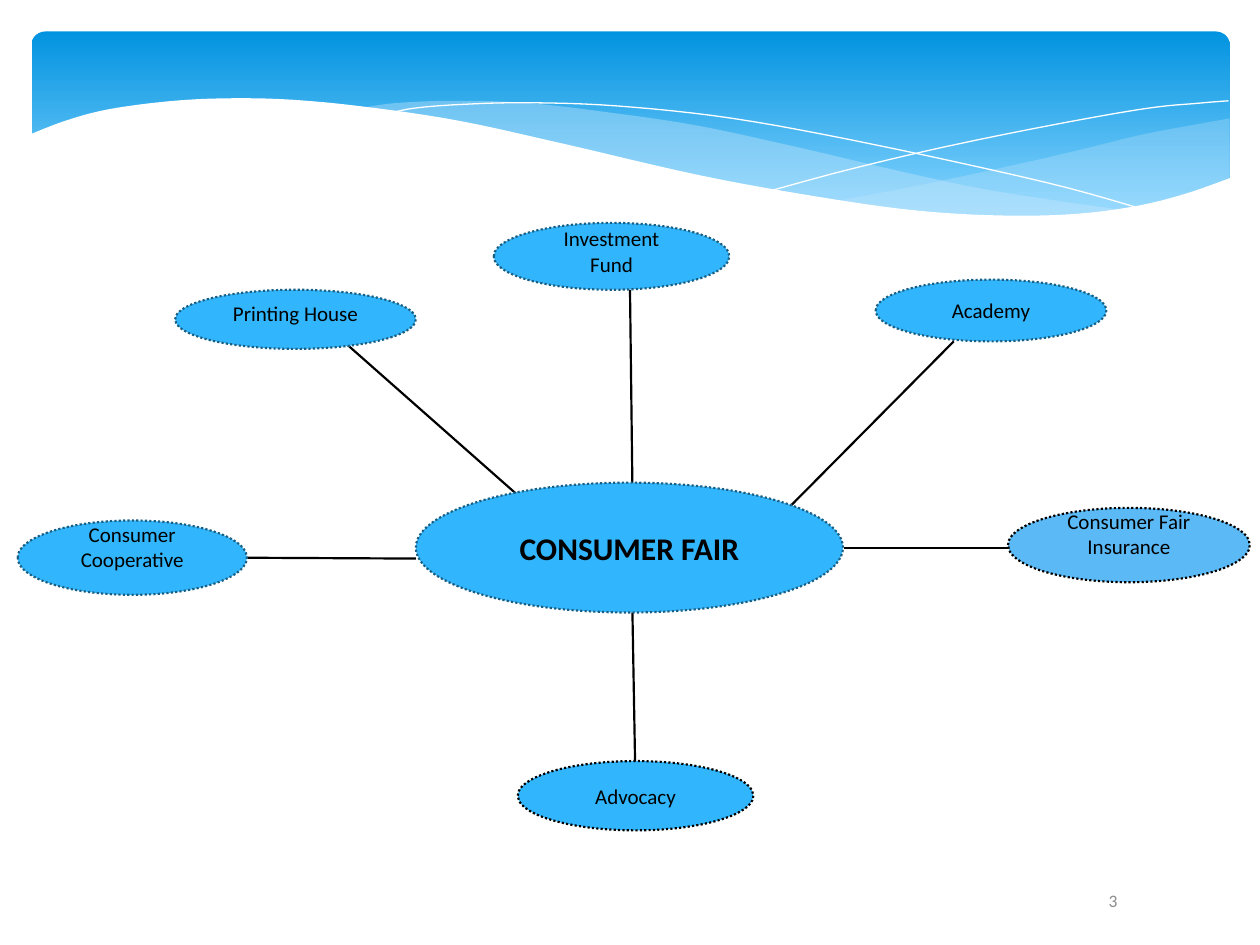
import dataclasses
import itertools
import typing

import lxml.etree
import pptx
import pptx.dml.color
import pptx.enum.dml
import pptx.enum.shapes
import pptx.enum.text
import pptx.oxml.ns
import pptx.util

Point = tuple[float, float]
FONT = "Calibri"
BLACK, WHITE, BLUE, DARK_BLUE = "000000", "FFFFFF", "31B6FD", "195F84"
VEIL = "C6E7FC"
STEPS_PER_KNOT = 6


@dataclasses.dataclass
class Bubble:
    text: str
    left: float
    top: float
    width: float
    height: float
    fill: str = BLUE
    outline: str = DARK_BLUE
    size: float = 12
    bold: bool = False
    text_raise: float = 0


@dataclasses.dataclass
class Wave:
    edges: list[list[Point]]
    fill: str | None = None
    opacity: int = 100


BUBBLES = [
    Bubble("Consumer Fair Insurance", 576, 290.2, 138.2, 42.5, "5BBAF6", BLACK, text_raise=6.3),
    Bubble("Consumer Cooperative", 10.1, 297.4, 131, 42.5, text_raise=6.3),
    Bubble("Printing House", 100.1, 165.6, 137.5, 33.8, text_raise=3.4),
    Bubble("Advocacy", 295.9, 434.9, 134.6, 39.6, outline=BLACK),
    Bubble("Investment Fund", 282.2, 127.4, 134.6, 38.2, text_raise=3),
    Bubble("Academy", 500.4, 159.8, 131.8, 35.3),
    Bubble("CONSUMER FAIR", 237.6, 275.8, 244.1, 74.2, size=18, bold=True),
]

SPOKES: list[tuple[Point, Point]] = [
    ((361.4, 349.9), (362.9, 434.9)),
    ((482.4, 313.2), (576, 313.2)),
    ((450.7, 290.2), (545, 195.1)),
    ((360, 165.6), (361.4, 279.4)),
    ((295.9, 283), (198, 196.6)),
    ((237.6, 319.2), (139.7, 318.7)),
]

WAVES = [
    Wave([
        [(702.7, 67.7), (682.6, 71.3), (652.3, 77), (619.9, 85), (579.6, 94.3),
         (524.9, 106), (475.9, 115.2)],
        [(475.9, 115.2), (517.7, 120.2), (553.7, 123.1), (593.3, 123.8), (634, 121.7),
         (668.2, 115.2), (702.7, 101.5)],
    ], VEIL, 29),
    Wave([
        [(643, 120.2), (602.6, 114.5), (558, 107.3), (508.3, 96.5), (452.9, 83.5),
         (399.6, 72), (352, 64.8), (302.4, 59), (259.9, 57.6), (225.4, 59), (205.9, 61.9)],
        [(205.9, 61.9), (246.2, 67.5), (290.9, 76.3), (353.5, 90.7), (420.5, 105.1),
         (478.8, 115.9), (530, 121.7), (573.1, 124.6), (610.6, 123.8), (643, 120.2)],
    ], VEIL, 40),
    Wave([
        [(222.5, 64.8), (236.2, 61.9), (261.4, 59.8), (299.5, 58.7), (352, 60.5),
         (419, 67.7), (500.4, 82.8), (598.3, 104.4), (653, 119.5)],
    ]),
    Wave([
        [(441.4, 108.7), (483.8, 97.2), (538.6, 84.2), (602, 71.3), (654.8, 62),
         (684.7, 59), (702, 57.6)],
    ]),
    Wave([
        [(703.4, 101.5), (676.8, 110.9), (647.3, 118.1), (612, 122.4), (571, 123.1),
         (522.7, 120.2), (466.6, 112.3), (399.6, 100.1), (321.8, 82.1), (262.8, 69.1),
         (210.2, 61.2), (165.6, 56.9), (127.4, 56.2), (95, 58), (61.2, 62.6),
         (37.4, 69), (16.6, 77)],
        [(16.6, 161.3), (703.4, 161.3)],
    ], WHITE),
]


def rgb(value: str) -> pptx.dml.color.RGBColor:
    return pptx.dml.color.RGBColor.from_string(value)


def smooth(knots: list[Point]) -> list[Point]:
    """Run a Catmull-Rom curve through the knots."""
    padded = [knots[0], *knots, knots[-1]]
    points = [knots[0]]
    for a, b, c, d in zip(padded, padded[1:], padded[2:], padded[3:]):
        for step in range(1, STEPS_PER_KNOT + 1):
            t = step / STEPS_PER_KNOT
            x, y = (
                0.5 * (2 * q + (r - p) * t + (2 * p - 5 * q + 4 * r - s) * t**2
                       + (3 * q - p - 3 * r + s) * t**3)
                for p, q, r, s in zip(a, b, c, d)
            )
            points.append((x, y))
    return points


def set_text(shape: typing.Any, text: str, size: float, color: str, bold: bool = False) -> None:
    frame = shape.text_frame
    frame.word_wrap = True
    frame.vertical_anchor = pptx.enum.text.MSO_ANCHOR.MIDDLE
    paragraph = frame.paragraphs[0]
    paragraph.text = text
    paragraph.alignment = pptx.enum.text.PP_ALIGN.CENTER
    paragraph.font.name = FONT
    paragraph.font.size = pptx.util.Pt(size)
    paragraph.font.bold = bold
    paragraph.font.color.rgb = rgb(color)


def draw_banner(slide: typing.Any) -> None:
    banner = slide.shapes.add_shape(
        pptx.enum.shapes.MSO_SHAPE.ROUNDED_RECTANGLE,
        *map(pptx.util.Pt, (18, 18, 684.7, 112.3)))
    banner.adjustments[0] = 0.07
    banner.shadow.inherit = False
    banner.line.fill.background()
    banner.fill.gradient()
    banner.fill.gradient_angle = 270
    stops = banner.fill.gradient_stops
    for stop, position, color in zip(stops, (0, 0.9), ("0293E0", "83D3FE")):
        stop.position = position
        stop.color.rgb = rgb(color)


def draw_wave(slide: typing.Any, wave: Wave) -> None:
    points = [
        (pptx.util.Pt(x), pptx.util.Pt(y))
        for x, y in itertools.chain.from_iterable(map(smooth, wave.edges))
    ]
    builder = slide.shapes.build_freeform(*points[0])
    builder.add_line_segments(points[1:], close=wave.fill is not None)
    shape = builder.convert_to_shape()
    shape.shadow.inherit = False
    if wave.fill is None:
        shape.fill.background()
        shape.line.color.rgb = rgb(WHITE)
        shape.line.width = pptx.util.Pt(0)
        return
    shape.line.fill.background()
    shape.fill.solid()
    shape.fill.fore_color.rgb = rgb(wave.fill)
    if wave.opacity < 100:
        color = shape._element.spPr.find(".//" + pptx.oxml.ns.qn("a:srgbClr"))
        lxml.etree.SubElement(color, pptx.oxml.ns.qn("a:alpha"), val=str(wave.opacity * 1000))


def draw_spoke(slide: typing.Any, start: Point, end: Point) -> None:
    connector = slide.shapes.add_connector(
        pptx.enum.shapes.MSO_CONNECTOR.STRAIGHT, *map(pptx.util.Pt, (*start, *end)))
    connector.line.color.rgb = rgb(BLACK)
    connector.line.width = pptx.util.Pt(1.25)
    lxml.etree.SubElement(connector._element.spPr, pptx.oxml.ns.qn("a:effectLst"))


def draw_bubble(slide: typing.Any, bubble: Bubble) -> None:
    shape = slide.shapes.add_shape(
        pptx.enum.shapes.MSO_SHAPE.OVAL,
        *map(pptx.util.Pt, (bubble.left, bubble.top, bubble.width, bubble.height)))
    shape.shadow.inherit = False
    shape.fill.solid()
    shape.fill.fore_color.rgb = rgb(bubble.fill)
    shape.line.color.rgb = rgb(bubble.outline)
    shape.line.width = pptx.util.Pt(1.25)
    shape.line.dash_style = pptx.enum.dml.MSO_LINE.ROUND_DOT
    set_text(shape, bubble.text, bubble.size, BLACK, bubble.bold)
    if bubble.text_raise:
        shape.text_frame.margin_top = pptx.util.Pt(0)
        shape.text_frame.margin_bottom = pptx.util.Pt(2 * bubble.text_raise)


def main() -> None:
    presentation = pptx.Presentation()
    presentation.slide_width = pptx.util.Pt(720)
    presentation.slide_height = pptx.util.Pt(540)
    slide = presentation.slides.add_slide(presentation.slide_layouts[6])
    draw_banner(slide)
    for wave in WAVES:
        draw_wave(slide, wave)
    number = slide.shapes.add_textbox(*map(pptx.util.Pt, (552.2, 500.4, 167.8, 28.8)))
    set_text(number, "3", 10, "8C8C8C")
    for start, end in SPOKES:
        draw_spoke(slide, start, end)
    for bubble in BUBBLES:
        draw_bubble(slide, bubble)
    presentation.save("out.pptx")


if __name__ == "__main__":
    main()
